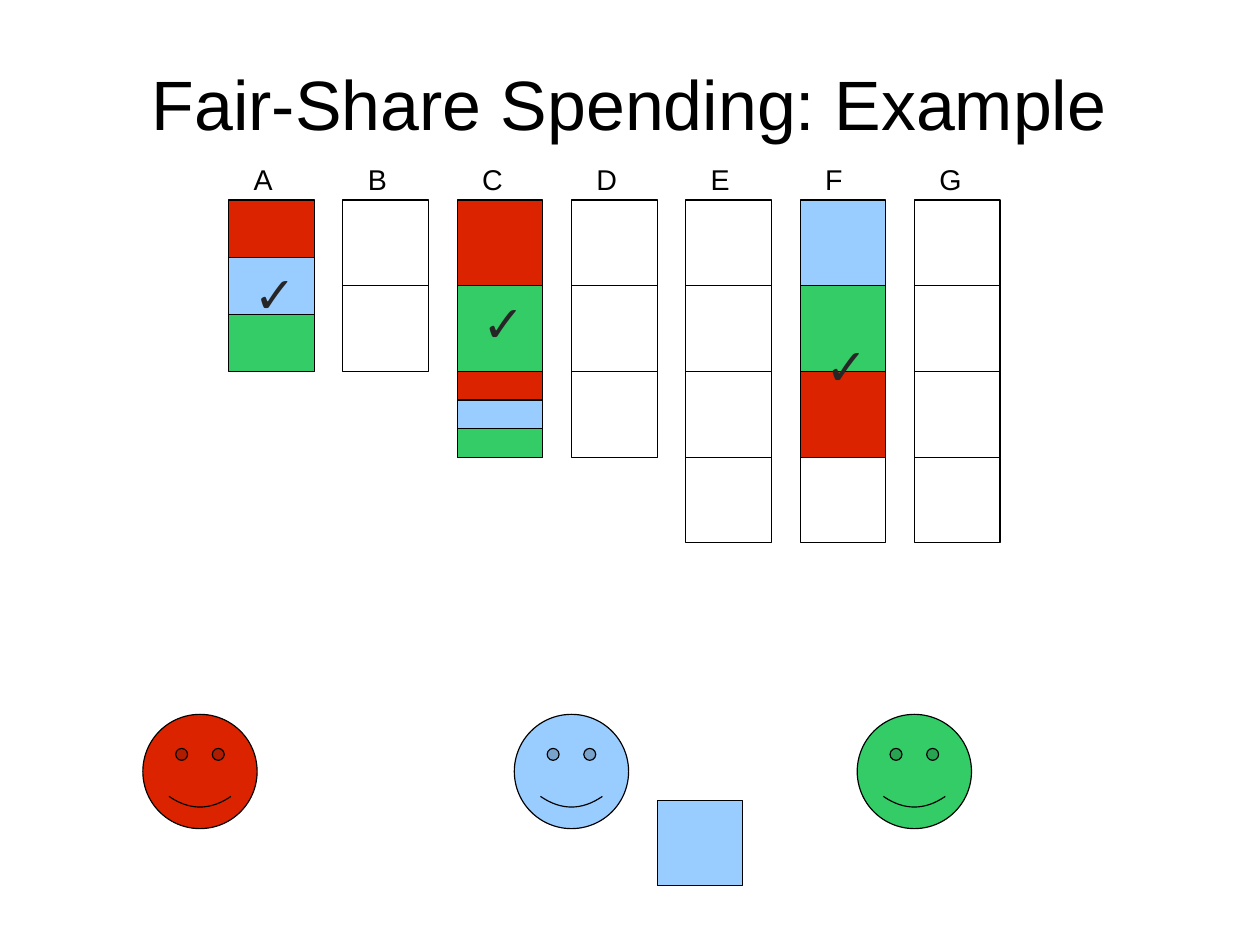
from dataclasses import dataclass

from pptx import Presentation
from pptx.dml.color import RGBColor
from pptx.enum.shapes import MSO_SHAPE
from pptx.enum.text import MSO_ANCHOR, PP_ALIGN
from pptx.util import Inches, Pt

RECTANGLE = MSO_SHAPE.RECTANGLE
SMILEY = MSO_SHAPE.SMILEY_FACE
MIDDLE = MSO_ANCHOR.MIDDLE
CENTER = PP_ALIGN.CENTER


@dataclass(frozen=True)
class Theme:
    red: RGBColor = RGBColor(0xDC, 0x23, 0x00)
    blue: RGBColor = RGBColor(0x99, 0xCC, 0xFF)
    green: RGBColor = RGBColor(0x33, 0xCC, 0x66)
    black: RGBColor = RGBColor(0, 0, 0)
    check: RGBColor = RGBColor(0x26, 0x26, 0x26)
    font: str = "Arial"
    check_font: str = "Open Sans"
    title_size: int = 44
    check_size: int = 32
    label_size: int = 18


theme = Theme()
CELL = 0.75
COLUMN_TOP = 1.75

# The page measures 28 by 21 centimetres
deck = Presentation()
deck.slide_width = Inches(28 / 2.54)
deck.slide_height = Inches(21 / 2.54)
page = deck.slides.add_slide(deck.slide_layouts[5])


def add_outlined(kind, left, top, width, height, color=None):
    shape = page.shapes.add_shape(
        kind, Inches(left), Inches(top), Inches(width), Inches(height))
    shape.shadow.inherit = False
    if color is None:
        shape.fill.background()
    else:
        shape.fill.solid()
        shape.fill.fore_color.rgb = color
    shape.line.color.rgb = theme.black
    shape.line.width = Pt(0.75)


def write(box, text, size, font, color):
    box.text_frame.word_wrap = True
    para = box.text_frame.paragraphs[0]
    span = para.add_run()
    span.text = text
    span.font.size = Pt(size)
    span.font.name = font
    span.font.color.rgb = color
    return para


# Title
title = page.shapes.title
title.left, title.top = Inches(0.55), Inches(0.21)
title.width, title.height = Inches(9.92), Inches(1.38)
frame = title.text_frame
frame.margin_left = frame.margin_right = 0
frame.margin_top = frame.margin_bottom = 0
frame.vertical_anchor = MIDDLE
heading = write(title, "Fair-Share Spending: Example",
                theme.title_size, theme.font, theme.black)
heading.alignment = CENTER

# Project columns: height and colour of each part, from the top down
empty = (CELL, None)
columns = {
    "A": [(0.5, theme.red), (0.5, theme.blue), (0.5, theme.green)],
    "B": [empty] * 2,
    "C": [(CELL, theme.red), (CELL, theme.green),
          (0.25, theme.red), (0.25, theme.blue), (0.25, theme.green)],
    "D": [empty] * 3,
    "E": [empty] * 4,
    "F": [(CELL, theme.blue), (CELL, theme.green), (CELL, theme.red), empty],
    "G": [empty] * 4,
}
check_tops = {"A": 2.25, "C": 2.5, "F": 2.88}

for left, (name, parts) in enumerate(columns.items(), start=2):
    label = page.shapes.add_textbox(
        Inches(left + 0.12), Inches(1.37), Inches(0.37), Inches(0.38))
    write(label, name, theme.label_size, theme.font, theme.black)

    top = COLUMN_TOP
    for height, color in parts:
        add_outlined(RECTANGLE, left, top, CELL, height, color)
        top += height

    # Check mark on funded projects
    if name in check_tops:
        check = page.shapes.add_textbox(
            Inches(left + 0.12), Inches(check_tops[name]),
            Inches(0.63), Inches(0.62))
        write(check, "✓", theme.check_size, theme.check_font, theme.check)

# Voters
for left, color in [(1.25, theme.red), (4.5, theme.blue), (7.5, theme.green)]:
    add_outlined(SMILEY, left, 6.25, 1, 1, color)

# Unspent share of the blue voter
add_outlined(RECTANGLE, 5.75, 7, CELL, CELL, theme.blue)

deck.save("out.pptx")
